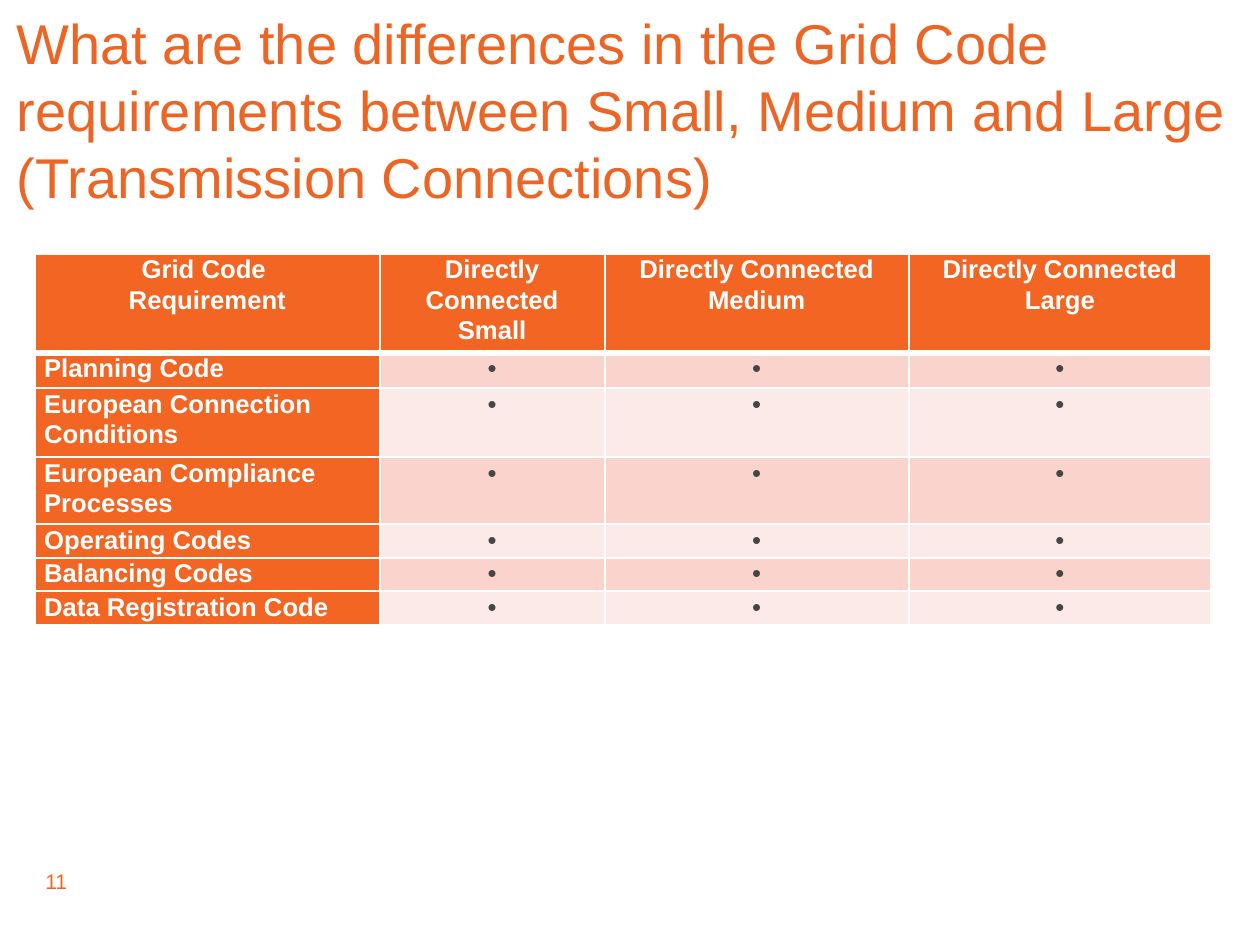
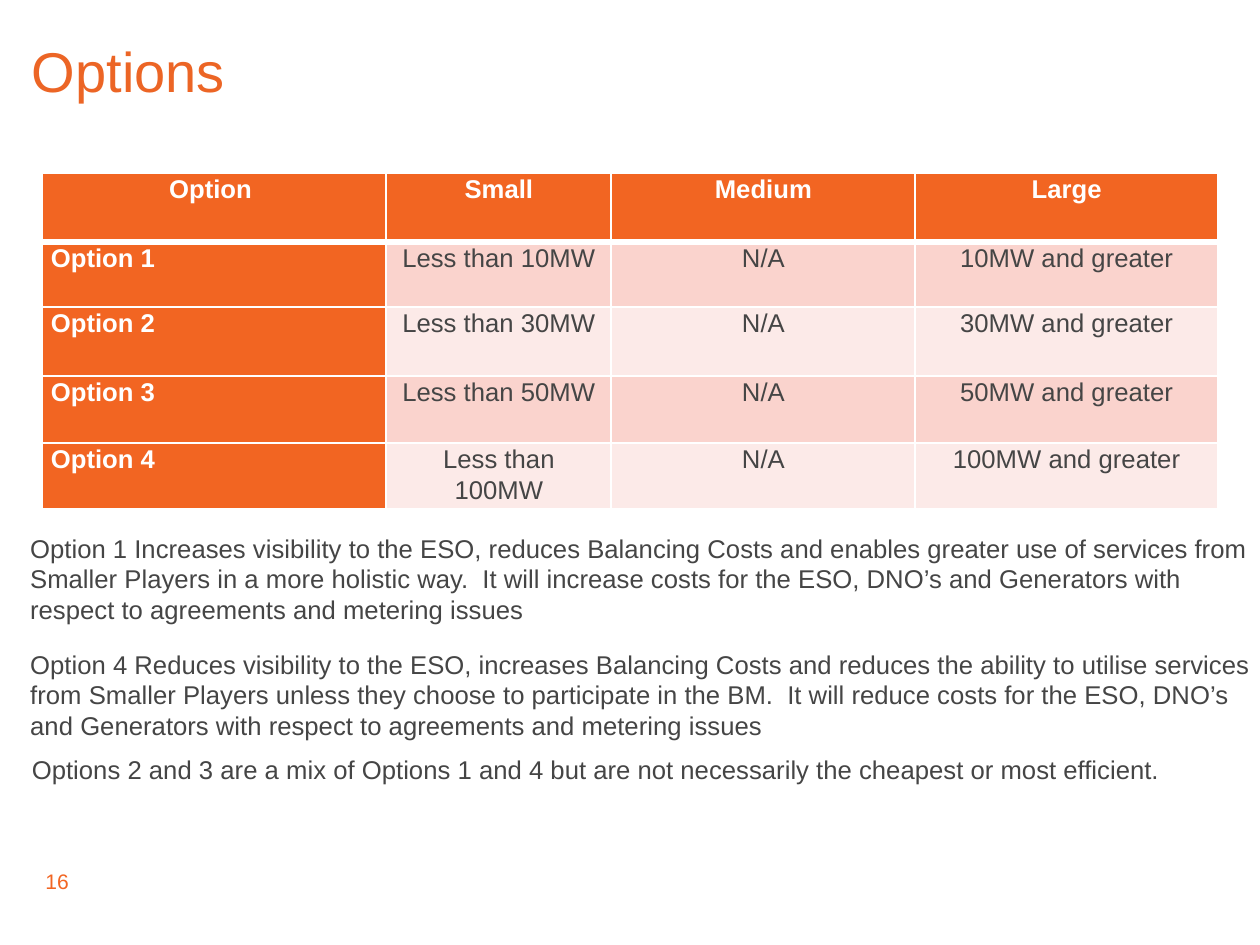
from lxml import etree
from pptx import Presentation
from pptx.dml.color import RGBColor
from pptx.enum.text import MSO_ANCHOR, MSO_AUTO_SIZE, PP_ALIGN
from pptx.oxml.ns import qn
from pptx.util import Inches, Pt

LEFT, CENTER = PP_ALIGN.LEFT, PP_ALIGN.CENTER
TOP, MIDDLE = MSO_ANCHOR.TOP, MSO_ANCHOR.MIDDLE
NO_FIT = MSO_AUTO_SIZE.NONE

# Shared look
COLORS = {"title": "EC6525", "accent": "F26522", "text": "454545",
          "white": "FFFFFF", "band_dark": "FAD3CD", "band_light": "FCEAE8"}
FONT = "Arial"
TITLE_SIZE, BODY_SIZE, NUMBER_SIZE = 24, 11, 9
TABLE_SPACING = 1.07
COLUMNS = [2.05, 1.34, 1.81, 1.8]
CELL_MARGIN = Pt(3.8)
THIN, THICK = 1, 3


def write(tf, lines, size, color, bold=False, align=LEFT, spacing=1.0):
    """Fill a text frame, one paragraph for each line."""
    for i, line in enumerate(lines):
        p = tf.paragraphs[0] if i == 0 else tf.add_paragraph()
        p.alignment, p.line_spacing = align, spacing
        p.space_before = p.space_after = Pt(0)
        r = p.add_run()
        r.text = line
        for name, value in {"name": FONT, "size": Pt(size), "bold": bold}.items():
            setattr(r.font, name, value)
        r.font.color.rgb = RGBColor.from_string(COLORS[color])


def add_title(s, lines, box, anchor):
    sp = s.shapes.title
    sp.left, sp.top, sp.width, sp.height = map(Inches, box)
    tf = sp.text_frame
    for name, value in {"word_wrap": True, "auto_size": NO_FIT,
                        "vertical_anchor": anchor}.items():
        setattr(tf, name, value)
    write(tf, lines, TITLE_SIZE, "title")


def add_text(s, lines, box, size=BODY_SIZE, color="text"):
    tf = s.shapes.add_textbox(*map(Inches, box)).text_frame
    for name in ("margin_left", "margin_top", "margin_right", "margin_bottom"):
        setattr(tf, name, 0)
    tf.word_wrap = False
    write(tf, lines, size, color)


def add_borders(cell, widths):
    """Draw white cell borders; widths are given by edge, in points."""
    tc_pr = cell._tc.get_or_add_tcPr()
    for i, (edge, width) in enumerate(widths.items()):
        ln = etree.Element(qn(f"a:ln{edge}"), w=str(Pt(width)))
        fill = etree.SubElement(ln, qn("a:solidFill"))
        etree.SubElement(fill, qn("a:srgbClr"), val=COLORS["white"])
        tc_pr.insert(i, ln)


def add_table(s, left, top, heights, rows):
    """Table with an orange header row and first column, and banded values."""
    frame = s.shapes.add_table(len(rows), len(COLUMNS), Inches(left), Inches(top),
                               Inches(sum(COLUMNS)), Inches(sum(heights)))
    table = frame.table
    for column, width in zip(table.columns, COLUMNS):
        column.width = Inches(width)
    for i, (row, height) in enumerate(zip(rows, heights)):
        table.rows[i].height = Inches(height)
        for j, text in enumerate(row):
            cell = table.cell(i, j)
            cell.margin_left = cell.margin_right = CELL_MARGIN
            cell.margin_top = cell.margin_bottom = 0
            heading = i == 0 or j == 0
            band = "band_dark" if i % 2 else "band_light"
            cell.fill.solid()
            cell.fill.fore_color.rgb = RGBColor.from_string(
                COLORS["accent" if heading else band])
            add_borders(cell, {"L": THIN, "R": THIN,
                               "T": THICK if i == 1 else THIN,
                               "B": THICK if i == 0 else THIN})
            write(cell.text_frame, text.split("\n"), BODY_SIZE,
                  "white" if heading else "text", heading,
                  LEFT if i and j == 0 else CENTER, TABLE_SPACING)


def add_slide(prs, number, title, box, anchor):
    s = prs.slides.add_slide(prs.slide_layouts[5])
    add_title(s, title, box, anchor)
    add_text(s, [number], (0.27, 5.17, 0.69, 0.15), NUMBER_SIZE, "accent")
    return s


def main():
    prs = Presentation()
    prs.slide_width = Inches(7.5)
    prs.slide_height = prs.slide_width * 3 // 4

    # Grid Code requirements
    s = add_slide(prs, "11", [
        "What are the differences in the Grid Code requirements between "
        "Small, Medium and Large",
        "(Transmission Connections)"], (0, 0, 7.48, 1.31), TOP)
    codes = ["Planning Code", "European Connection Conditions",
             "European Compliance Processes", "Operating Codes",
             "Balancing Codes", "Data Registration Code"]
    header = ["Grid Code \nRequirement"] + [
        f"Directly Connected {size}" for size in ("Small", "Medium", "Large")]
    add_table(s, 0.21, 1.51, [0.59, 0.21, 0.41, 0.4, 0.2, 0.2, 0.2],
              [header] + [[code] + ["•"] * 3 for code in codes])

    # Options
    s = add_slide(prs, "16", ["Options"], (0.09, 0, 7.01, 0.84), MIDDLE)
    limits = [10, 30, 50, 100]
    add_table(s, 0.25, 1.03, [0.41, 0.39, 0.41, 0.4, 0.39],
              [["Option ", "Small", "Medium", "Large"]] +
              [[f"Option {n}", f"Less than {mw}MW", "N/A", f"{mw}MW and greater"]
               for n, mw in enumerate(limits, 1)])
    add_text(s, [
        "Option 1 Increases visibility to the ESO, reduces Balancing Costs and "
        "enables greater use of services from",
        "Smaller Players in a more holistic way.  It will increase costs for the "
        "ESO, DNO’s and Generators with",
        "respect to agreements and metering issues"], (0.18, 3.17, 7.33, 0.56))
    add_text(s, [
        "Option 4 Reduces visibility to the ESO, increases Balancing Costs and "
        "reduces the ability to utilise services",
        "from Smaller Players unless they choose to participate in the BM.  It "
        "will reduce costs for the ESO, DNO’s",
        "and Generators with respect to agreements and metering issues"],
        (0.18, 3.86, 7.31, 0.56))
    add_text(s, ["Options 2 and 3 are a mix of Options 1 and 4 but are not "
                 "necessarily the cheapest or most efficient."],
             (0.19, 4.49, 6.83, 0.19))

    prs.save("out.pptx")


if __name__ == "__main__":
    main()
